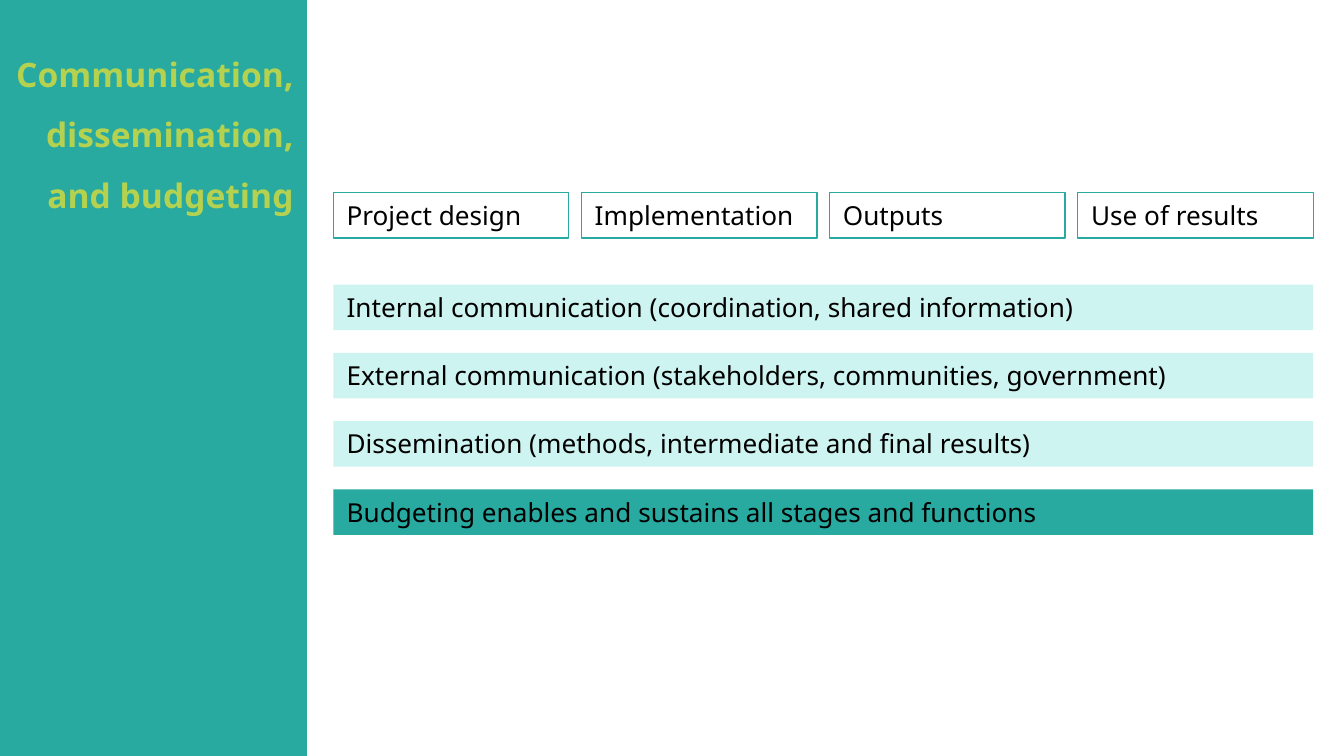
"""Build a slide on communication, dissemination and budgeting."""
import pptx
import pptx.dml.color
import pptx.enum.shapes
import pptx.enum.text
import pptx.util

Cm = pptx.util.Cm
Pt = pptx.util.Pt
ALIGN = pptx.enum.text.PP_ALIGN
ANCHOR = pptx.enum.text.MSO_ANCHOR
FIT = pptx.enum.text.MSO_AUTO_SIZE

TEAL, PALE, LIME, BLACK = "28AAA0", "CEF4F1", "B4D250", "000000"
LEFT, WIDTH, HIGH = 6.3, 18.52, 0.86
STAGES = ["Project design", "Implementation", "Outputs", "Use of results"]
BARS = [
    ("Internal communication (coordination, shared information)", PALE),
    ("External communication (stakeholders, communities, government)", PALE),
    ("Dissemination (methods, intermediate and final results)", PALE),
    ("Budgeting enables and sustains all stages and functions", TEAL),
]


def tint(color, code):
    """Set a colour format from a hex string."""
    color.rgb = pptx.dml.color.RGBColor.from_string(code)


def apply(item, look):
    """Set the attributes of an item from a dict."""
    for name, value in look.items():
        setattr(item, name, value)


def write(shape, text, code, font, para, frame):
    """Put one formatted paragraph in a shape."""
    body = shape.text_frame
    apply(body, {"word_wrap": True, **frame})
    line = body.paragraphs[0]
    line.text = text
    apply(line, para)
    apply(line.font, {"name": "Noto Sans", **font})
    tint(line.font.color, code)


def block(slide, area, fill=None, edge=None):
    """Add a rectangle, given its place in centimetres."""
    kind = pptx.enum.shapes.MSO_SHAPE.RECTANGLE
    shape = slide.shapes.add_shape(kind, *map(Cm, area))
    shape.shadow.inherit = False
    if fill:
        shape.fill.solid()
        tint(shape.fill.fore_color, fill)
    else:
        shape.fill.background()
    if edge:
        tint(shape.line.color, edge)
        shape.line.width = Pt(0.75)
    else:
        shape.line.fill.background()
    return shape


def label(slide, text, area, fill=None, edge=None):
    """Add a rectangle with a line of black text."""
    shape = block(slide, area, fill, edge)
    write(shape, text, BLACK, {"size": Pt(14)}, {"alignment": ALIGN.LEFT},
          {"vertical_anchor": ANCHOR.TOP, "auto_size": FIT.SHAPE_TO_FIT_TEXT})


def head(slide, text):
    """Set the title on a teal side panel."""
    title = slide.shapes.title
    panel = block(slide, (0, 0, 5.8, 14.29), TEAL)
    title.element.addprevious(panel.element)
    apply(title, {"left": Cm(0), "top": Cm(0.38),
                  "width": Cm(5.8), "height": Cm(6.3)})
    sides = ("left", "top", "right", "bottom")
    frame = {f"margin_{side}": Cm(0.25) for side in sides}
    frame.update(vertical_anchor=ANCHOR.TOP, auto_size=FIT.NONE)
    write(title, text, LIME, {"size": Pt(18), "bold": True},
          {"alignment": ALIGN.RIGHT, "line_spacing": 1.5}, frame)


def main():
    """Build and save the slide."""
    deck = pptx.Presentation()
    apply(deck, {"slide_width": Cm(25.4), "slide_height": Cm(14.29)})
    slide = deck.slides.add_slide(deck.slide_layouts[5])
    head(slide, "Communication, dissemination, and budgeting")
    gap = 0.24
    wide = (WIDTH - gap * (len(STAGES) - 1)) / len(STAGES)
    for col, text in enumerate(STAGES):
        area = (LEFT + col * (wide + gap), 3.64, wide, HIGH)
        label(slide, text, area, edge=TEAL)
    for row, (text, fill) in enumerate(BARS):
        label(slide, text, (LEFT, 5.38 + row * 1.29, WIDTH, HIGH), fill)
    deck.save("out.pptx")


if __name__ == "__main__":
    main()
